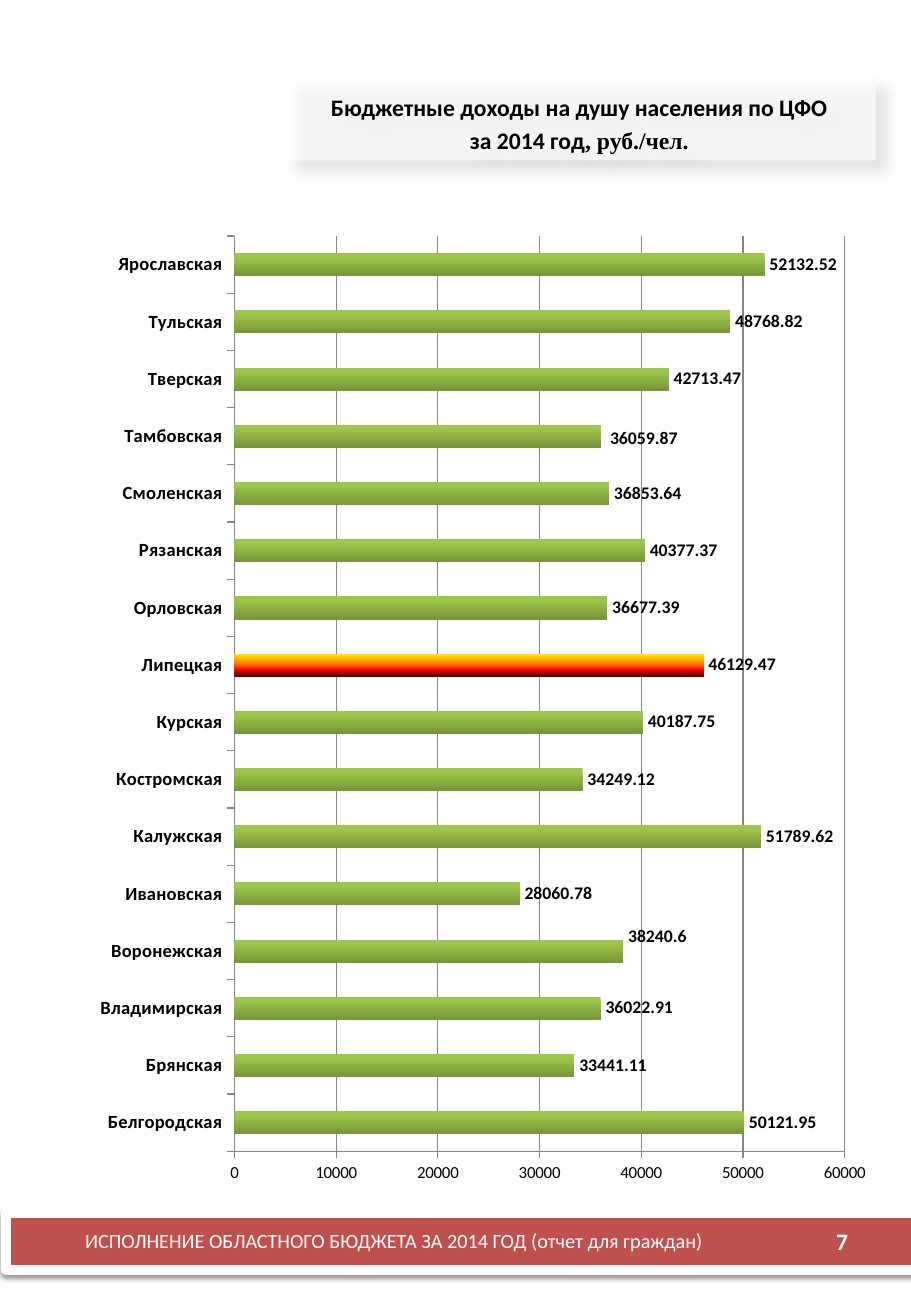
"""Build a one-slide budget report with regional income per head as a bar chart."""
import copy

import pptx
import pptx.chart.data
import pptx.dml.color
import pptx.enum.chart
import pptx.enum.shapes
import pptx.enum.text
import pptx.oxml
import pptx.util
from pptx.util import Inches

TITLE = [
    [("Бюджетные доходы на душу населения по ЦФО", "Calibri")],
    [("за 2014 год", "Calibri"), (", руб./чел.", "Times New Roman")],
]
FOOTER = "ИСПОЛНЕНИЕ ОБЛАСТНОГО БЮДЖЕТА ЗА 2014 ГОД (отчет для граждан)"
PAGE_NUMBER = "7"
INCOMES = {
    "Белгородская": 50121.95,
    "Брянская": 33441.11,
    "Владимирская": 36022.91,
    "Воронежская": 38240.6,
    "Ивановская": 28060.78,
    "Калужская": 51789.62,
    "Костромская": 34249.12,
    "Курская": 40187.75,
    "Липецкая": 46129.47,
    "Орловская": 36677.39,
    "Рязанская": 40377.37,
    "Смоленская": 36853.64,
    "Тамбовская": 36059.87,
    "Тверская": 42713.47,
    "Тульская": 48768.82,
    "Ярославская": 52132.52,
}
HIGHLIGHT = "Липецкая"
LABEL_OFFSETS = {"Воронежская": (0, -0.015), "Тамбовская": (0.005, 0.003)}
GREEN_STOPS = [(0, "9BC74A"), (0.2, "9AC549"), (1, "769535")]
FIRE_STOPS = [(0, "FFF200"), (0.45, "FF7A00"), (0.7, "FF0300"), (1, "4D0808")]
PLOT_AREA = {"x": 0.227, "y": 0.019, "w": 0.726, "h": 0.938}
A = "http://schemas.openxmlformats.org/drawingml/2006/main"
C = "http://schemas.openxmlformats.org/drawingml/2006/chart"
ALIGN = pptx.enum.text.PP_ALIGN
ANCHOR = pptx.enum.text.MSO_ANCHOR


def rgb(value):
    return pptx.dml.color.RGBColor.from_string(value)


def set_font(font, size, color="000000", bold=False, name="Calibri"):
    font.size = pptx.util.Pt(size)
    font.bold = bold
    font.name = name
    font.color.rgb = rgb(color)


def write(shape, paragraphs, align=ALIGN.CENTER, anchor=ANCHOR.MIDDLE,
          space=0, size=14, color="000000", bold=False):
    frame = shape.text_frame
    frame.word_wrap = True
    frame.auto_size = pptx.enum.text.MSO_AUTO_SIZE.NONE
    frame.vertical_anchor = anchor
    for index, runs in enumerate(paragraphs):
        paragraph = frame.add_paragraph() if index else frame.paragraphs[0]
        paragraph.alignment = align
        paragraph.space_before = pptx.util.Pt(space if index else 0)
        for text, name in runs:
            run = paragraph.add_run()
            run.text = text
            set_font(run.font, size, color, bold, name)


def add_shadow(shape, alpha, blur, distance, angle):
    shape.shadow.inherit = False
    effects = shape._element.spPr.find(f"{{{A}}}effectLst")
    effects.append(pptx.oxml.parse_xml(
        f'<a:outerShdw xmlns:a="{A}" blurRad="{pptx.util.Pt(blur)}"'
        f' dist="{pptx.util.Pt(distance)}" dir="{angle * 60000}" rotWithShape="0">'
        f'<a:srgbClr val="000000"><a:alpha val="{alpha * 1000}"/></a:srgbClr>'
        '</a:outerShdw>'))


def fill_gradient(fill, stops):
    fill.gradient()
    fill.gradient_angle = 270
    first = fill.gradient_stops[0]._gs
    for _ in stops[2:]:
        first.addnext(copy.deepcopy(first))
    for stop, (position, color) in zip(fill.gradient_stops, stops):
        stop.position = position
        stop.color.rgb = rgb(color)


def manual_layout(sizes, inner=False):
    target = '<c:layoutTarget val="inner"/>' if inner else ""
    modes = '<c:xMode val="edge"/><c:yMode val="edge"/>' if inner else ""
    values = "".join(f'<c:{key} val="{value}"/>' for key, value in sizes.items())
    return pptx.oxml.parse_xml(
        f'<c:layout xmlns:c="{C}"><c:manualLayout>{target}{modes}{values}'
        '</c:manualLayout></c:layout>')


def style_axis(axis, size, bold):
    set_font(axis.tick_labels.font, size, bold=bold)
    axis.major_tick_mark = pptx.enum.chart.XL_TICK_MARK.OUTSIDE
    axis.format.line.color.rgb = rgb("868686")
    axis.format.line.width = pptx.util.Pt(0.75)


def add_income_chart(slide):
    data = pptx.chart.data.CategoryChartData()
    data.categories = list(INCOMES)
    data.add_series("Series 1", list(INCOMES.values()))
    chart = slide.shapes.add_chart(
        pptx.enum.chart.XL_CHART_TYPE.BAR_CLUSTERED,
        Inches(0.36), Inches(1.79), Inches(6.92), Inches(8.03), data).chart
    chart.has_legend = False
    chart.has_title = False
    set_font(chart.font, 10)
    style_axis(chart.category_axis, 11, True)
    style_axis(chart.value_axis, 10, False)
    chart.value_axis.minimum_scale = 0
    chart.value_axis.maximum_scale = 60000
    chart.value_axis.major_unit = 10000
    gridlines = chart.value_axis.major_gridlines.format.line
    gridlines.color.rgb = rgb("868686")
    gridlines.width = pptx.util.Pt(0.75)

    plot = chart.plots[0]
    plot.gap_width = 150
    plot.vary_by_categories = False
    series = plot.series[0]
    fill_gradient(series.format.fill, GREEN_STOPS)
    regions = list(INCOMES)
    fill_gradient(series.points[regions.index(HIGHLIGHT)].format.fill, FIRE_STOPS)

    labels = series.data_labels
    labels.show_value = True
    labels.position = pptx.enum.chart.XL_LABEL_POSITION.OUTSIDE_END
    set_font(labels.font, 10.5, bold=True)
    for region, (x, y) in LABEL_OFFSETS.items():
        index = regions.index(region)
        label = series.points[index].data_label
        set_font(label.font, 10.5, bold=True)
        label.position = pptx.enum.chart.XL_LABEL_POSITION.OUTSIDE_END
        marker = series._element.xpath(f'c:dLbls/c:dLbl/c:idx[@val="{index}"]')[0]
        marker.addnext(manual_layout({"x": x, "y": y}))

    plot_area = chart._chartSpace.chart.plotArea
    for layout in plot_area.findall(f"{{{C}}}layout"):
        plot_area.remove(layout)
    plot_area.insert(0, manual_layout(PLOT_AREA, inner=True))


def add_footer(slide):
    band = slide.shapes.add_shape(
        pptx.enum.shapes.MSO_SHAPE.RECTANGLE,
        Inches(0.05), Inches(9.98), Inches(7.5), Inches(0.47))
    band.fill.solid()
    band.fill.fore_color.rgb = rgb("C0504D")
    band.line.color.rgb = rgb("FFFFFF")
    band.line.width = pptx.util.Pt(6)
    add_shadow(band, 38, 3.1, 1.6, 90)
    for text, left, width, style in (
            (FOOTER, 0.29, 5.91, {"size": 12}),
            (PAGE_NUMBER, 6.43, 0.65, {"bold": True, "align": ALIGN.RIGHT})):
        box = slide.shapes.add_textbox(
            Inches(left), Inches(10.06), Inches(width), Inches(0.3))
        write(box, [[(text, "Calibri")]], color="FFFFFF", **style)


def format_title(title):
    title.left, title.top = Inches(2.33), Inches(0.61)
    title.width, title.height = Inches(4.88), Inches(0.71)
    title.fill.solid()
    title.fill.fore_color.rgb = rgb("FFFFFF")
    color = title._element.spPr.find(f"{{{A}}}solidFill")[0]
    color.append(pptx.oxml.parse_xml(f'<a:alpha xmlns:a="{A}" val="60000"/>'))
    add_shadow(title, 16, 7, 10, 45)
    write(title, TITLE, anchor=ANCHOR.BOTTOM, space=2.8, bold=True)


def main():
    presentation = pptx.Presentation()
    presentation.slide_width = Inches(7.5)
    presentation.slide_height = Inches(10.83)
    slide = presentation.slides.add_slide(presentation.slide_layouts[5])
    add_footer(slide)
    add_income_chart(slide)
    format_title(slide.shapes.title)
    presentation.save("out.pptx")


if __name__ == "__main__":
    main()
